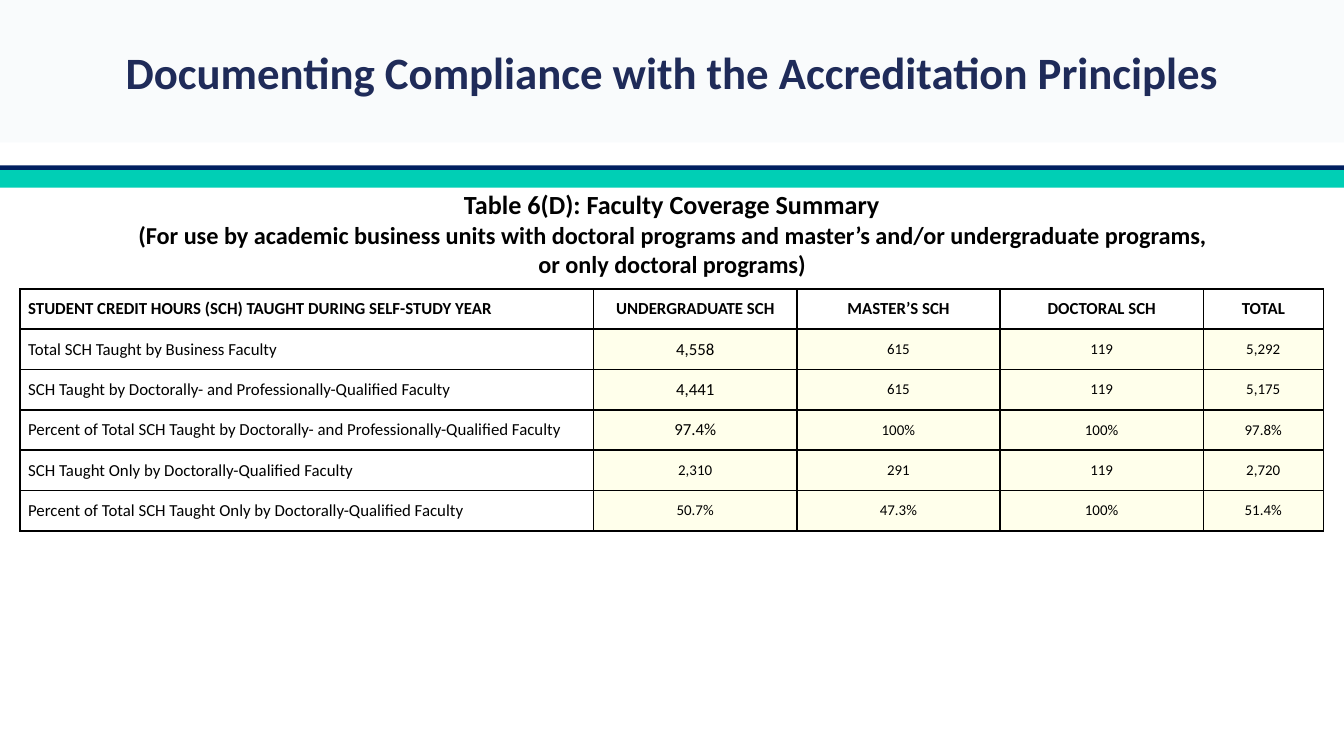
import pptx
import pptx.util
import pptx.dml.color
import pptx.enum.shapes
import pptx.enum.text
import pptx.oxml
import pptx.oxml.ns

Pt = pptx.util.Pt
RGB = pptx.dml.color.RGBColor
ALIGN = pptx.enum.text.PP_ALIGN
MIDDLE = pptx.enum.text.MSO_ANCHOR.MIDDLE

NAVY = RGB(0x00, 0x20, 0x60)
TEAL = RGB(0x00, 0xCF, 0xB5)
WHITE = RGB(0xFF, 0xFF, 0xFF)
PALE = RGB(0xE8, 0xF0, 0xF4)
INK = RGB(0x1F, 0x2B, 0x59)
BLACK = RGB(0x00, 0x00, 0x00)
CREAM = RGB(0xFF, 0xFF, 0xEB)
FONT = "Calibri"

# Content
TITLE = "Documenting Compliance with the Accreditation Principles"
HEADING = [
    ("Table 6(D): Faculty Coverage Summary", 14),
    ("(For use by academic business units with doctoral programs "
     "and master’s and/or undergraduate programs,", 13),
    ("or only doctoral programs)", 13),
]
ROWS = [
    ("STUDENT CREDIT HOURS (SCH) TAUGHT DURING SELF-STUDY YEAR",
     "UNDERGRADUATE SCH", "MASTER’S SCH", "DOCTORAL SCH", "TOTAL"),
    ("Total SCH Taught by Business Faculty",
     "4,558", "615", "119", "5,292"),
    ("SCH Taught by Doctorally- and Professionally-Qualified Faculty",
     "4,441", "615", "119", "5,175"),
    ("Percent of Total SCH Taught by Doctorally- and Professionally-Qualified Faculty",
     "97.4%", "100%", "100%", "97.8%"),
    ("SCH Taught Only by Doctorally-Qualified Faculty",
     "2,310", "291", "119", "2,720"),
    ("Percent of Total SCH Taught Only by Doctorally-Qualified Faculty",
     "50.7%", "47.3%", "100%", "51.4%"),
]

# Layout
WIDE, HIGH = 720, 405
BODY = 91.2
COLS = [307.2, 108.9, 108.9, 108.9, 64.3]
ROW = 21.6
EDGE = 10.8

deck = pptx.Presentation()
deck.slide_width, deck.slide_height = Pt(WIDE), Pt(HIGH)
slide = deck.slides.add_slide(deck.slide_layouts[6])


def band(top, high, color):
    shape = slide.shapes.add_shape(
        pptx.enum.shapes.MSO_SHAPE.RECTANGLE, 0, Pt(top), Pt(WIDE), Pt(high))
    shape.shadow.inherit = False
    shape.line.fill.background()
    shape.fill.solid()
    shape.fill.fore_color.rgb = color
    return shape


def inset(box, side, top=0):
    box.margin_left = box.margin_right = Pt(side)
    box.margin_top, box.margin_bottom = Pt(top), 0


def write(para, text, size, color=BLACK, bold=True, align=ALIGN.CENTER):
    para.alignment = align
    run = para.add_run()
    run.text = text
    font = run.font
    font.name, font.size, font.bold = FONT, Pt(size), bold
    font.color.rgb = color


def border(cell):
    props = cell._tc.get_or_add_tcPr()
    for spot, side in enumerate(("lnL", "lnR", "lnT", "lnB")):
        props.insert(spot, pptx.oxml.parse_xml(
            f'<a:{side} {pptx.oxml.ns.nsdecls("a")} w="{Pt(1)}"><a:solidFill>'
            f'<a:srgbClr val="{BLACK}"/></a:solidFill></a:{side}>'))


# Rules under the title, and the white body
band(88.6, 16.4, NAVY)
band(BODY, HIGH - BODY, WHITE)
band(BODY, 9.4, TEAL)

# Title on a faint band
head = band(0, 76.3, PALE)
tint = head.fill._xPr.find(".//" + pptx.oxml.ns.qn("a:srgbClr"))
tint.append(pptx.oxml.parse_xml(
    f'<a:alpha {pptx.oxml.ns.nsdecls("a")} val="25000"/>'))
frame = head.text_frame
frame.word_wrap = True
frame.vertical_anchor = MIDDLE
inset(frame, 0)
write(frame.paragraphs[0], TITLE, 24, INK)

# Table heading
frame = slide.shapes.add_textbox(
    0, Pt(BODY), Pt(WIDE), Pt(HIGH - BODY)).text_frame
frame.word_wrap = True
inset(frame, 14.4, 9.8)
for i, (text, size) in enumerate(HEADING):
    para = frame.add_paragraph() if i else frame.paragraphs[0]
    write(para, text, size)

# Table
grid = slide.shapes.add_table(
    len(ROWS), len(COLS), Pt(EDGE), Pt(154.8),
    Pt(sum(COLS)), Pt(ROW * len(ROWS))).table
for col, wide in zip(grid.columns, COLS):
    col.width = Pt(wide)
for r, row in enumerate(ROWS):
    grid.rows[r].height = Pt(ROW)
    for c, text in enumerate(row):
        cell = grid.cell(r, c)
        cell.vertical_anchor = MIDDLE
        inset(cell, 0 if c else 4.3)
        if r and c:
            cell.fill.solid()
            cell.fill.fore_color.rgb = CREAM
        else:
            cell.fill.background()
        border(cell)
        # Labels and the first three undergraduate figures are larger
        large = r == 0 or c == 0 or (c == 1 and r <= 3)
        para = cell.text_frame.paragraphs[0]
        para.space_before = Pt(4 if r == 0 and c else 3)
        para.space_after = Pt(3)
        write(para, text, 9 if large else 8, bold=r == 0,
              align=ALIGN.CENTER if c else ALIGN.LEFT)

deck.save("out.pptx")
